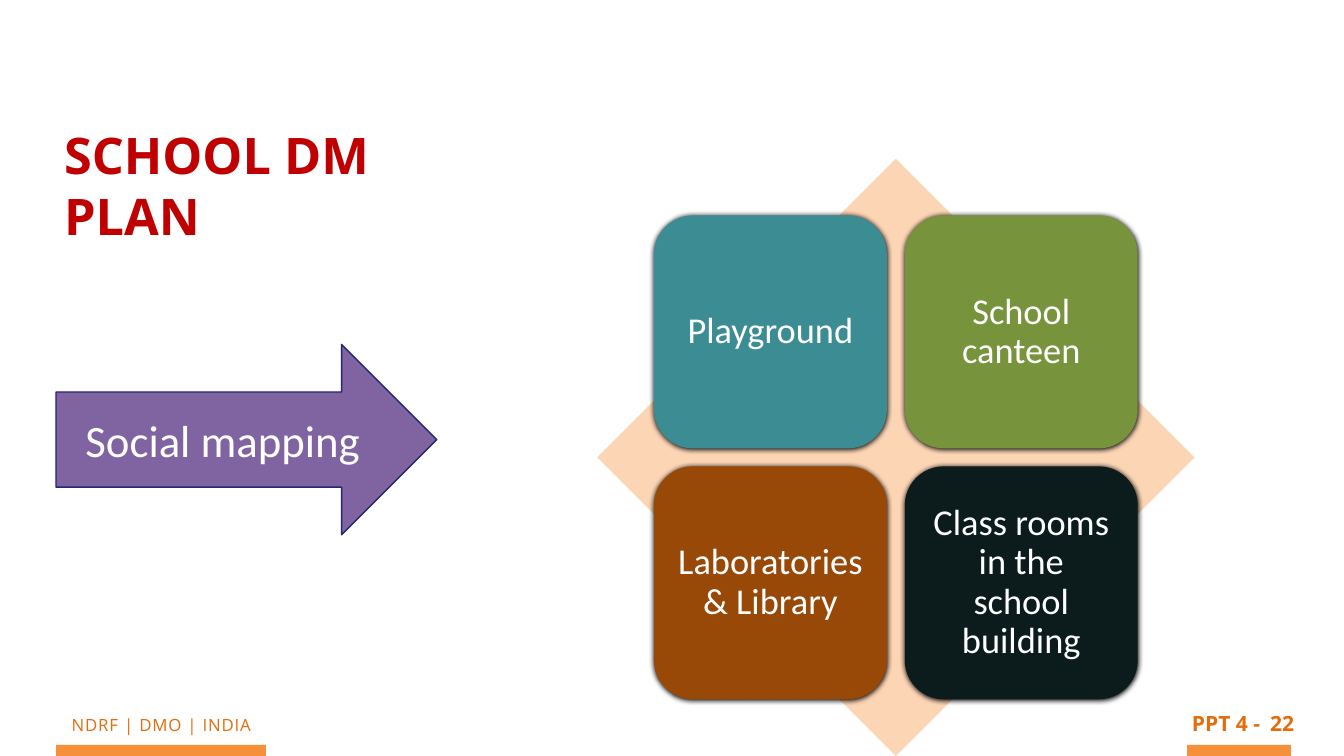
import pptx
import pptx.util
import pptx.dml.color
import pptx.enum.shapes
import pptx.enum.text
import pptx.oxml
import pptx.oxml.ns

SHAPE = pptx.enum.shapes.MSO_SHAPE
ALIGN = pptx.enum.text.PP_ALIGN
ANCHOR = pptx.enum.text.MSO_ANCHOR
COLUMNS, ROWS = 96, 54
HEADING_FONT, BODY_FONT = "Open Sans", "Calibri"
RED, ORANGE, BAR, WHITE = "C00000", "E46C0A", "F7903B", "FFFFFF"
SHADOW = (
    f'<a:outerShdw {pptx.oxml.ns.nsdecls("a")} blurRad="101600" dist="12700" '
    'dir="2700000" algn="tl" rotWithShape="0"><a:srgbClr val="000000"/></a:outerShdw>'
)


def color(value):
    return pptx.dml.color.RGBColor.from_string(value)


class SlideBuilder:
    """Draw styled elements on one slide, placed on a grid of columns and rows."""

    def __init__(self, presentation):
        self.column = presentation.slide_width / COLUMNS
        self.row = presentation.slide_height / ROWS
        self.slide = presentation.slides.add_slide(presentation.slide_layouts[5])

    def box(self, left, top, width, height):
        return (int(left * self.column), int(top * self.row),
                int(width * self.column), int(height * self.row))

    def set_text(self, shape, text, size, font, text_color, bold=False, align=ALIGN.CENTER,
                 anchor=ANCHOR.TOP, inset=0.09, wrap=True, line_spacing=None, tracking=None):
        frame = shape.text_frame
        frame.auto_size = pptx.enum.text.MSO_AUTO_SIZE.NONE
        frame.word_wrap = wrap
        frame.vertical_anchor = anchor
        frame.margin_left = frame.margin_right = pptx.util.Inches(inset)
        frame.margin_top = frame.margin_bottom = pptx.util.Inches(inset)
        paragraph = frame.paragraphs[0]
        paragraph.alignment = align
        paragraph.line_spacing = line_spacing
        run = paragraph.add_run()
        run.text = text
        run.font.name = font
        run.font.size = pptx.util.Pt(size)
        run.font.bold = bold
        run.font.color.rgb = color(text_color)
        if tracking:
            run.font._element.set("spc", str(int(tracking * 100)))

    def title(self, text, *place):
        shape = self.slide.shapes.title
        shape.left, shape.top, shape.width, shape.height = self.box(*place)
        self.set_text(shape, text, 72, HEADING_FONT, RED, bold=True, align=ALIGN.LEFT)

    def label(self, text, *place, **style):
        shape = self.slide.shapes.add_textbox(*self.box(*place))
        self.set_text(shape, text, font=HEADING_FONT, text_color=ORANGE, **style)

    def shape(self, kind, fill, *place, line=None):
        shape = self.slide.shapes.add_shape(kind, *self.box(*place))
        shape.shadow.inherit = False
        shape.fill.solid()
        shape.fill.fore_color.rgb = color(fill)
        if line:
            shape.line.color.rgb = color(line)
            shape.line.width = pptx.util.Pt(2)
        else:
            shape.line.fill.background()
        return shape

    def card(self, text, fill, *place):
        shape = self.shape(SHAPE.ROUNDED_RECTANGLE, fill, *place)
        effects = shape._element.spPr.find(pptx.oxml.ns.qn("a:effectLst"))
        effects.append(pptx.oxml.parse_xml(SHADOW))
        self.set_text(shape, text, 52, BODY_FONT, WHITE, anchor=ANCHOR.MIDDLE,
                      inset=0.22, line_spacing=0.9)

    def matrix(self, cards, left, top, side):
        self.shape(SHAPE.DIAMOND, "FCD5B5", left, top, side, side)
        margin, size, pitch = 0.095 * side, 0.39 * side, 0.42 * side
        for index, (text, fill) in enumerate(cards):
            row, column = divmod(index, 2)
            self.card(text, fill, left + margin + column * pitch,
                      top + margin + row * pitch, size, size)

    def arrow(self, text, *place):
        shape = self.shape(SHAPE.RIGHT_ARROW, "8064A2", *place, line="262671")
        self.set_text(shape, text, 64, BODY_FONT, WHITE, anchor=ANCHOR.MIDDLE, inset=0.1)

    def footer(self):
        self.label("NDRF | DMO | INDIA", 2.38, 50.7, 18.3, 2.1, size=24, tracking=1.2)
        self.label("PPT 4 -", 84.8, 50.45, 5.55, 2.45, size=30, bold=True, wrap=False)
        self.label("22", 89.8, 50.45, 3.56, 2, size=30, bold=True)
        for left, width in ((4, 15), (84.8, 7.4)):
            self.shape(SHAPE.RECTANGLE, BAR, left, 53.2, width, 0.8)


def main():
    presentation = pptx.Presentation()
    presentation.slide_width = pptx.util.Inches(26.67)
    presentation.slide_height = pptx.util.Inches(15)
    builder = SlideBuilder(presentation)
    builder.footer()
    builder.title("SCHOOL DM PLAN", 4.25, 8.57, 32.72, 9.36)
    cards = (
        ("Playground", "3C8C93"),
        ("School canteen", "77933C"),
        ("Laboratories & Library", "984807"),
        ("Class rooms in the school building", "0C1C1D"),
    )
    builder.matrix(cards, 42.66, 11.34, 42.66)
    builder.arrow("Social mapping", 4, 24.6, 27.2, 13.6)
    presentation.save("out.pptx")


if __name__ == "__main__":
    main()
